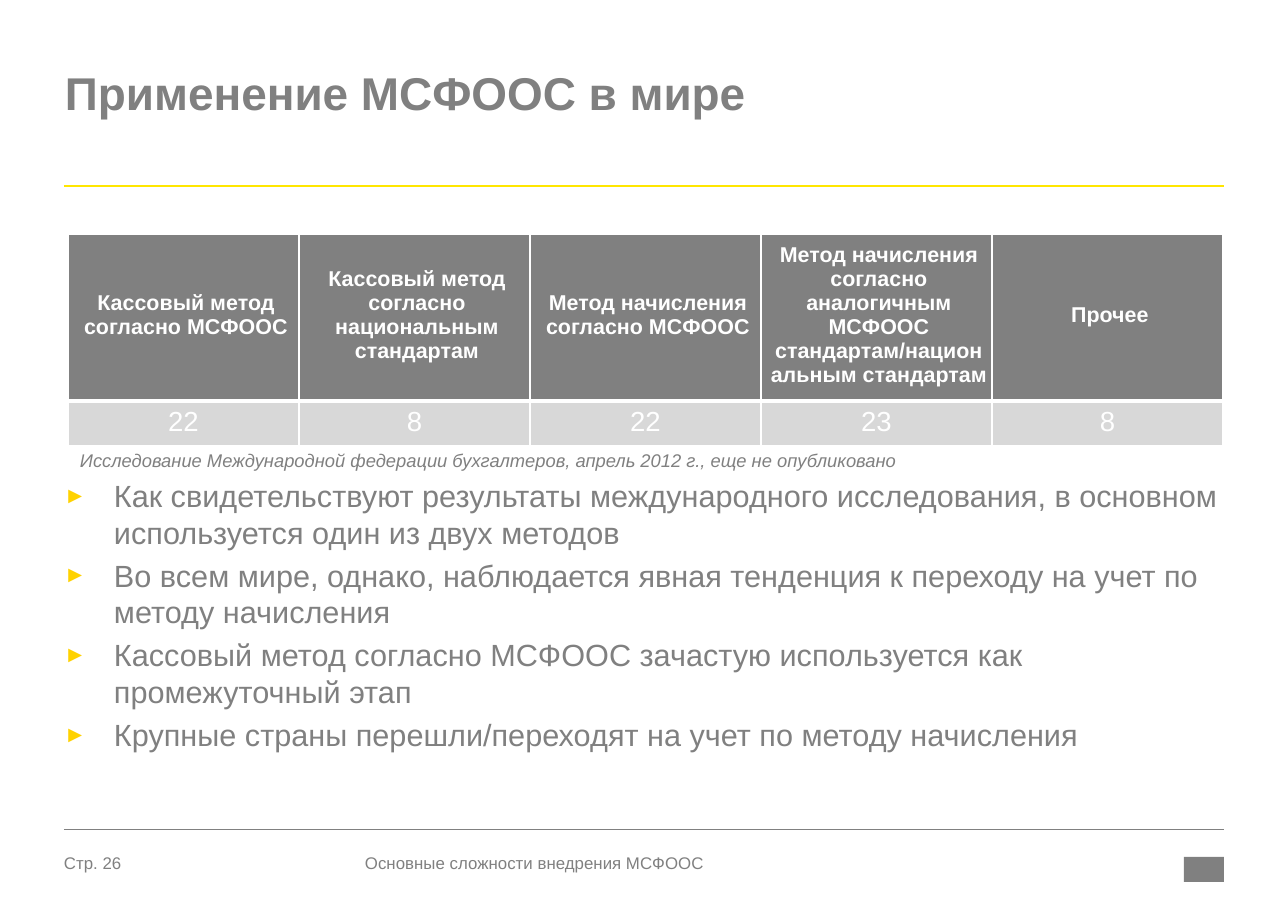
from dataclasses import dataclass

from lxml.etree import SubElement
from pptx import Presentation
from pptx.dml.color import RGBColor as RGB
from pptx.enum.shapes import MSO_CONNECTOR as LINK, MSO_SHAPE as SHAPE
from pptx.enum.text import MSO_ANCHOR as ANCHOR, PP_ALIGN as ALIGN
from pptx.oxml.ns import qn
from pptx.util import Pt

PX = 8298  # EMU in one px
LEFT, RIGHT = 64, 1224


@dataclass(frozen=True)
class Theme:
    font: str = "Arial"
    gray: str = "808080"
    pale: str = "D8D8D8"
    white: str = "FFFFFF"
    rule: str = "FFE600"
    mark: str = "FFD200"
    title: int = 30
    body: int = 20
    value: int = 18
    head: int = 14
    note: int = 12
    foot: int = 11


THEME = Theme()

COLUMNS = [
    ("Кассовый метод согласно МСФООС", 22),
    ("Кассовый метод согласно национальным стандартам", 8),
    ("Метод начисления согласно МСФООС", 22),
    ("Метод начисления согласно аналогичным МСФООС "
     "стандартам/национальным стандартам", 23),
    ("Прочее", 8),
]
POINTS = [
    "Как свидетельствуют результаты международного исследования, "
    "в основном используется один из двух методов",
    "Во всем мире, однако, наблюдается явная тенденция к переходу "
    "на учет по методу начисления",
    "Кассовый метод согласно МСФООС зачастую используется как промежуточный этап",
    "Крупные страны перешли/переходят на учет по методу начисления",
]


def px(*sizes):
    return [size * PX for size in sizes]


def assign(item, values):
    for name, value in values.items():
        setattr(item, name, value)


def pad(item, left, top, right, bottom):
    """Set the inner margins of a text frame or a cell, in px."""
    sides = {"left": left, "top": top, "right": right, "bottom": bottom}
    assign(item, {f"margin_{side}": size * PX for side, size in sides.items()})


def write(para, text, size, color=THEME.gray, **extra):
    run = para.add_run()
    run.text = text
    assign(run.font, {"name": THEME.font, "size": Pt(size), **extra})
    run.font.color.rgb = RGB.from_string(color)


def add_text(slide, box, lines, size, inset=(0, 0, 0, 0), **extra):
    frame = slide.shapes.add_textbox(*px(*box)).text_frame
    frame.word_wrap = True
    pad(frame, *inset)
    for i, line in enumerate(lines):
        para = frame.add_paragraph() if i else frame.paragraphs[0]
        write(para, line, size, **extra)
    return frame.paragraphs


def add_mark(para):
    """Give a paragraph a hanging triangle bullet."""
    para.space_before = Pt(4)
    props = para._p.get_or_add_pPr()
    props.set("marL", str(50 * PX))
    props.set("indent", str(-50 * PX))
    tint = SubElement(props, qn("a:buClr"))
    SubElement(tint, qn("a:srgbClr"), val=THEME.mark)
    SubElement(props, qn("a:buSzPct"), val="75000")
    SubElement(props, qn("a:buFont"), typeface=THEME.font)
    SubElement(props, qn("a:buChar"), char="►")


def add_rule(slide, y, color, width):
    rule = slide.shapes.add_connector(LINK.STRAIGHT, *px(LEFT, y, RIGHT, y))
    rule.line.color.rgb = RGB.from_string(color)
    rule.line.width = Pt(width)
    SubElement(rule._element.spPr, qn("a:effectLst"))


def add_edge(cell, side, width):
    props = cell._tc.get_or_add_tcPr()
    edge = SubElement(props, qn(f"a:ln{side}"), w=str(Pt(width)))
    fill = SubElement(edge, qn("a:solidFill"))
    SubElement(fill, qn("a:srgbClr"), val=THEME.white)


def fill_cell(cell, text, size, fill, thick, **extra):
    """Write and paint a cell; its thick side has a wider edge."""
    for side in "LRTB":
        add_edge(cell, side, 3 if side == thick else 1)
    cell.fill.solid()
    cell.fill.fore_color.rgb = RGB.from_string(fill)
    para = cell.text_frame.paragraphs[0]
    para.alignment = ALIGN.CENTER
    write(para, text, size, THEME.white, **extra)


def add_grid(slide):
    width, heights = 231, (166, 44)
    count = len(COLUMNS)
    box = px(68, 234, width * count, sum(heights))
    grid = slide.shapes.add_table(2, count, *box).table
    grid.horz_banding = False
    for row, height in zip(grid.rows, heights):
        row.height = height * PX
    for i, (label, value) in enumerate(COLUMNS):
        grid.columns[i].width = width * PX
        head = grid.cell(0, i)
        fill_cell(head, label, THEME.head, THEME.gray, "B", bold=True)
        head.vertical_anchor = ANCHOR.MIDDLE
        pad(head, 9, 4, 4, 9)
        fill_cell(grid.cell(1, i), str(value), THEME.value, THEME.pale, "T", bold=False)


def add_badge(slide):
    badge = slide.shapes.add_shape(SHAPE.RECTANGLE, *px(1184, 857, 40, 25))
    badge.shadow.inherit = False
    badge.fill.solid()
    badge.fill.fore_color.rgb = RGB.from_string(THEME.gray)
    badge.line.fill.background()


def main():
    deck = Presentation()
    deck.slide_width, deck.slide_height = px(1288, 911)
    slide = deck.slides.add_slide(deck.slide_layouts[6])

    add_rule(slide, 186, THEME.rule, 1.5)
    add_rule(slide, 829, THEME.gray, 0.25)
    add_badge(slide)

    title = add_text(slide, (65, 73, 1160, 114), ["Применение МСФООС в мире"],
                     THEME.title, bold=True)
    title[0].line_spacing = 0.85
    add_grid(slide)
    add_text(slide, (68, 442, 897, 35),
             ["Исследование Международной федерации бухгалтеров, "
              "апрель 2012 г., еще не опубликовано"],
             THEME.note, inset=(12, 7, 12, 7), italic=True)
    for para in add_text(slide, (LEFT, 477, 1160, 247), POINTS, THEME.body):
        add_mark(para)

    add_text(slide, (LEFT, 853, 101, 26), ["Стр. 26"], THEME.foot)
    add_text(slide, (365, 853, 484, 26), ["Основные сложности внедрения МСФООС"],
             THEME.foot)
    deck.save("out.pptx")


if __name__ == "__main__":
    main()
